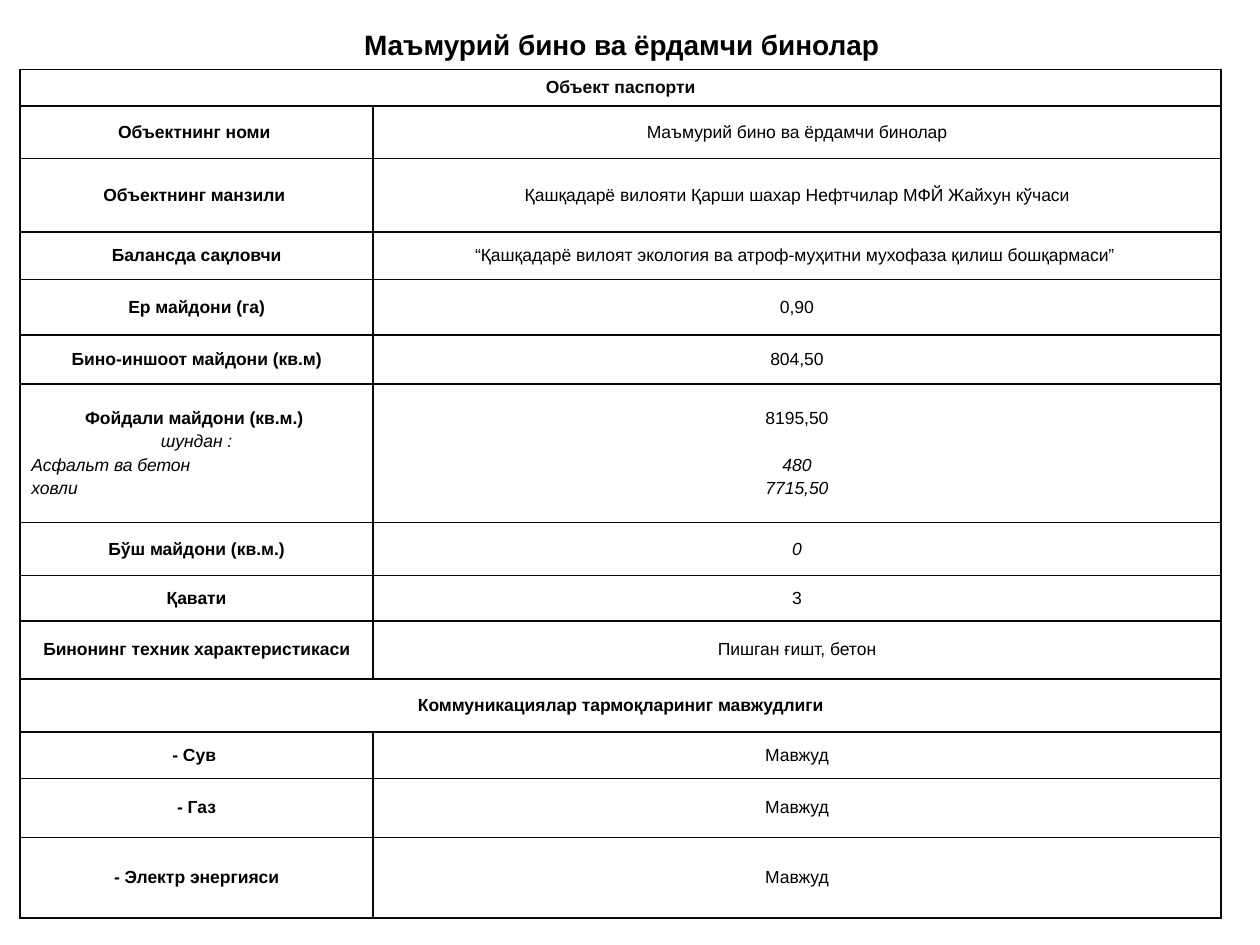
"""Build the object passport slide: a title above a two-column table."""
from dataclasses import dataclass
from typing import Any

from lxml import etree
from pptx import Presentation, util as u
from pptx.dml import color as dml
from pptx.enum import text
from pptx.oxml import ns

INK, BLACK = "080808", "000000"
CENTER, LEFT = text.PP_ALIGN.CENTER, text.PP_ALIGN.LEFT
GAP, SKIPPED_LINE = 2, 15.5
COLUMNS = (2.8, 6.73)


@dataclass(frozen=True)
class Line:
    words: str
    bold: bool = False
    italic: bool = False
    align: Any = CENTER
    before: float = GAP


@dataclass(frozen=True)
class Row:
    height: float
    label: tuple[Line, ...]
    value: tuple[Line, ...] = ()


def row(height: float, label: str, value: str = "", italic: bool = False) -> Row:
    values = (Line(value, italic=italic),) if value else ()
    return Row(height, (Line(label, bold=True),), values)


ROWS = (
    row(0.29, "Объект паспорти"),
    row(0.42, "Объектнинг номи ", "Маъмурий бино ва ёрдамчи бинолар"),
    row(0.58, "Объектнинг манзили ",
        "Қашқадарё вилояти Қарши шахар Нефтчилар МФЙ Жайхун кўчаси"),
    row(0.38, "Балансда сақловчи",
        "“Қашқадарё вилоят экология ва атроф-муҳитни мухофаза қилиш бошқармаси” "),
    row(0.44, "Ер майдони (га)", "0,90"),
    row(0.39, "Бино-иншоот майдони (кв.м)", "804,50"),
    Row(1.1,
        (Line("Фойдали майдони (кв.м.) ", bold=True),
         Line("шундан :", italic=True),
         Line("Асфальт ва бетон", italic=True, align=LEFT),
         Line("ховли", italic=True, align=LEFT)),
        (Line("8195,50"),
         Line("480", italic=True, before=SKIPPED_LINE),
         Line("7715,50", italic=True))),
    row(0.42, "Бўш майдони (кв.м.)", "0", italic=True),
    row(0.36, "Қавати", "3"),
    row(0.46, "Бинонинг техник характеристикаси", "Пишган ғишт, бетон"),
    row(0.42, "Коммуникациялар тармоқлариниг мавжудлиги"),
    row(0.37, "- Сув ", "Мавжуд"),
    row(0.47, "- Газ", "Мавжуд"),
    row(0.64, "- Электр энергияси", "Мавжуд"),
)


def rgb(code: str) -> dml.RGBColor:
    return dml.RGBColor.from_string(code)


def write(tf: Any, lines: tuple[Line, ...], size: float, ink: str) -> None:
    for i, line in enumerate(lines):
        p = tf.paragraphs[0] if i == 0 else tf.add_paragraph()
        p.alignment = line.align
        p.space_before = u.Pt(line.before if i else 0)
        r = p.add_run()
        r.text = line.words
        style = {"name": "Arial", "size": u.Pt(size),
                 "bold": line.bold, "italic": line.italic}
        for key, value in style.items():
            setattr(r.font, key, value)
        r.font.color.rgb = rgb(ink)


def format_cell(cell: Any) -> None:
    cell.fill.background()
    layout = {"vertical_anchor": text.MSO_ANCHOR.MIDDLE,
              "margin_left": u.Inches(0.09), "margin_right": u.Inches(0.09),
              "margin_top": u.Inches(0.05), "margin_bottom": u.Inches(0.05)}
    for key, value in layout.items():
        setattr(cell, key, value)
    props = cell._tc.get_or_add_tcPr()
    for i, side in enumerate("LRTB"):
        border = etree.Element(ns.qn(f"a:ln{side}"), w=str(u.Pt(1)))
        fill = etree.SubElement(border, ns.qn("a:solidFill"))
        etree.SubElement(fill, ns.qn("a:srgbClr"), val=str(rgb(INK)))
        props.insert(i, border)


def add_passport(s: Any) -> None:
    height = sum(item.height for item in ROWS)
    frame = s.shapes.add_table(len(ROWS), len(COLUMNS), u.Inches(0.16), u.Inches(0.55),
                               u.Inches(sum(COLUMNS)), u.Inches(height))
    table = frame.table
    table.first_row = table.horz_banding = False
    for column, width in zip(table.columns, COLUMNS):
        column.width = u.Inches(width)
    for i, item in enumerate(ROWS):
        table.rows[i].height = u.Inches(item.height)
        label, value = table.cell(i, 0), table.cell(i, 1)
        for cell in (label, value):
            format_cell(cell)
        write(label.text_frame, item.label, 10, INK if i == 0 else BLACK)
        if item.value:
            write(value.text_frame, item.value, 10, BLACK)
        else:
            label.merge(value)


def add_title(s: Any) -> None:
    sp = s.shapes.title
    place = {"left": 0.08, "top": 0.22, "width": 9.71, "height": 0.26}
    for key, value in place.items():
        setattr(sp, key, u.Inches(value))
    tf = sp.text_frame
    layout = {"margin_top": 0, "margin_bottom": 0, "word_wrap": True,
              "auto_size": text.MSO_AUTO_SIZE.NONE,
              "vertical_anchor": text.MSO_ANCHOR.MIDDLE}
    for key, value in layout.items():
        setattr(tf, key, value)
    write(tf, (Line("Маъмурий бино ва ёрдамчи бинолар", bold=True),), 16, BLACK)


def main() -> None:
    prs = Presentation()
    prs.slide_width, prs.slide_height = u.Inches(10), u.Inches(7.5)
    s = prs.slides.add_slide(prs.slide_layouts.get_by_name("Title Only"))
    add_title(s)
    add_passport(s)
    prs.save("out.pptx")


if __name__ == "__main__":
    main()
